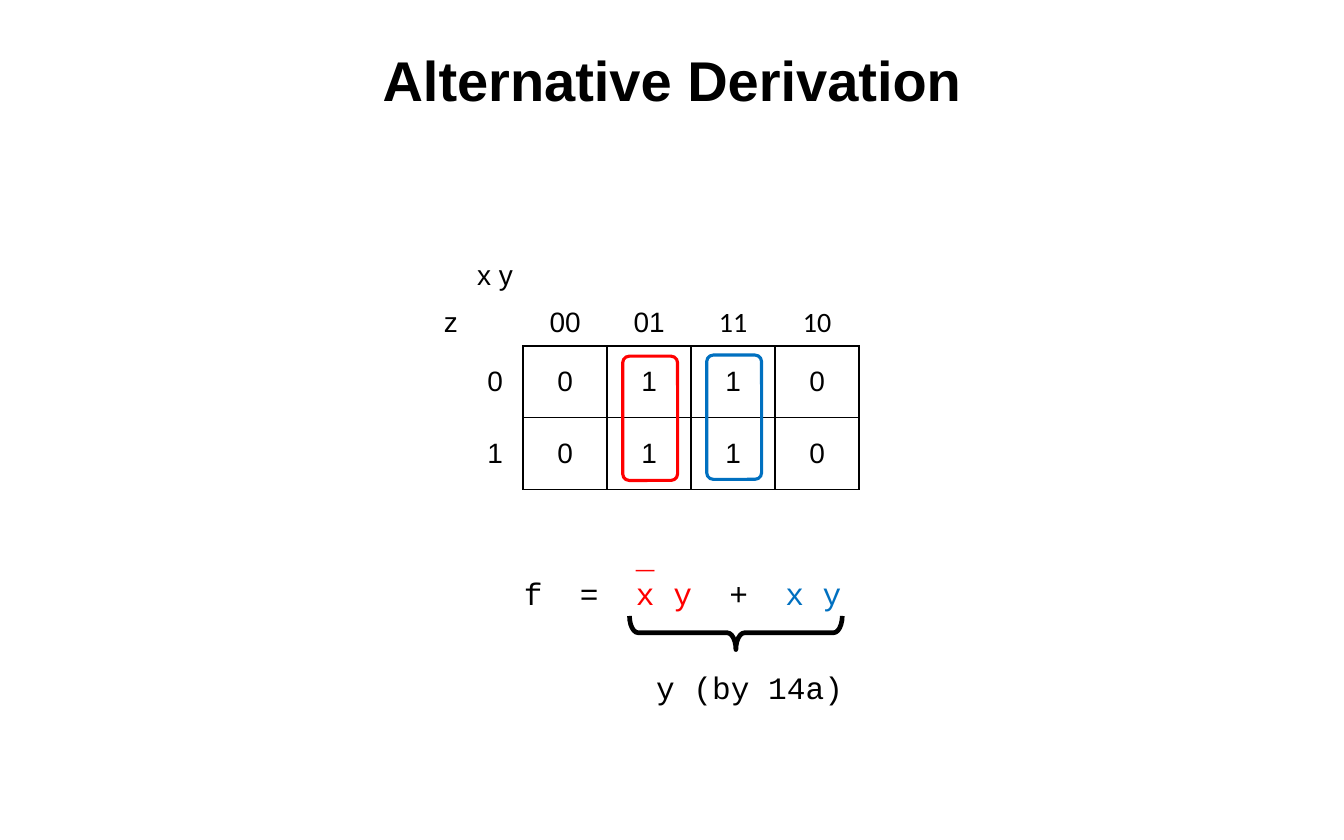
from dataclasses import dataclass

from lxml import etree
from pptx import Presentation
from pptx.dml.color import RGBColor
from pptx.enum import shapes, text
from pptx.oxml import ns
from pptx.util import Inches, Pt


@dataclass(frozen=True)
class Theme:
    black: str = "000000"
    white: str = "FFFFFF"
    red: str = "FF0000"
    blue: str = "0070C0"
    sans: str = "Arial"
    alternate: str = "Calibri"
    mono: str = "Courier New"
    title_size: int = 36
    map_size: int = 18
    formula_size: int = 20


@dataclass(frozen=True)
class Group:
    """A loop around adjacent ones in the Karnaugh map."""
    left: float
    top: float
    color: str


@dataclass(frozen=True)
class Term:
    """A piece of the formula, starting at a character column."""
    column: int
    label: str
    color: str


THEME = Theme()
CHARACTER = 1 / 6  # width in inches of a monospaced character at 20 pt
MAP_LABELS = [
    ["", "x y", "", "", "", ""],
    ["z", "", "00", "01", "11", "10"],
    ["", "0", "0", "1", "1", "0"],
    ["", "1", "0", "1", "1", "0"],
]
COLUMN_WIDTHS = [0.5] * 2 + [0.75] * 4
ROW_HEIGHTS = [0.42] * 2 + [0.64] * 2
ALTERNATE_FONT_LABELS = {(1, 4), (1, 5)}
NEIGHBOURS = {"L": (0, -1), "R": (0, 1), "T": (-1, 0), "B": (1, 0)}
GROUPS = [Group(5.56, 3.18, THEME.red), Group(6.31, 3.17, THEME.blue)]
TERMS = [
    Term(0, "f", THEME.black),
    Term(3, "=", THEME.black),
    Term(6, "x y", THEME.red),
    Term(11, "+", THEME.black),
    Term(14, "x y", THEME.blue),
]


def write_text(paragraph, label: str, *, size: int, font: str,
               color: str = THEME.black, bold: bool = False, align=None) -> None:
    run = paragraph.add_run()
    run.text = label
    run.font.size = Pt(size)
    run.font.name = font
    run.font.bold = bold
    run.font.color.rgb = RGBColor.from_string(color)
    if align is not None:
        paragraph.alignment = align


def add_title(slide, label: str) -> None:
    title = slide.shapes.title
    title.left, title.top = Inches(0), Inches(0.33)
    title.width, title.height = Inches(12), Inches(0.75)
    title.text_frame.vertical_anchor = text.MSO_ANCHOR.MIDDLE
    write_text(title.text_frame.paragraphs[0], label, size=THEME.title_size,
               font=THEME.sans, bold=True, align=text.PP_ALIGN.CENTER)


def in_grid(row: int, column: int) -> bool:
    return 2 <= row < len(ROW_HEIGHTS) and 2 <= column < len(COLUMN_WIDTHS)


def set_borders(cell, row: int, column: int) -> None:
    """Draw black edges around the map's values and white ones elsewhere."""
    properties = cell._tc.get_or_add_tcPr()
    for index, (side, (down, across)) in enumerate(NEIGHBOURS.items()):
        touches_grid = in_grid(row, column) or in_grid(row + down, column + across)
        line = etree.Element(ns.qn(f"a:ln{side}"), w=str(Pt(1)))
        fill = etree.SubElement(line, ns.qn("a:solidFill"))
        etree.SubElement(fill, ns.qn("a:srgbClr"),
                         val=THEME.black if touches_grid else THEME.white)
        properties.insert(index, line)


def add_karnaugh_map(slide) -> None:
    frame = slide.shapes.add_table(
        len(ROW_HEIGHTS), len(COLUMN_WIDTHS), Inches(3.67), Inches(2.25),
        Inches(sum(COLUMN_WIDTHS)), Inches(sum(ROW_HEIGHTS)))
    table = frame.table
    table.first_row = table.horz_banding = False
    for column, width in zip(table.columns, COLUMN_WIDTHS):
        column.width = Inches(width)
    for row, height in zip(table.rows, ROW_HEIGHTS):
        row.height = Inches(height)
    for r, labels in enumerate(MAP_LABELS):
        for c, label in enumerate(labels):
            cell = table.cell(r, c)
            cell.margin_left = Inches(0.21 if label == "z" else 0)
            cell.margin_right = cell.margin_top = cell.margin_bottom = 0
            cell.vertical_anchor = text.MSO_ANCHOR.MIDDLE
            cell.fill.solid()
            cell.fill.fore_color.rgb = RGBColor.from_string(THEME.white)
            set_borders(cell, r, c)
            if label:
                font = THEME.alternate if (r, c) in ALTERNATE_FONT_LABELS else THEME.sans
                write_text(cell.text_frame.paragraphs[0], label, size=THEME.map_size,
                           font=font, align=text.PP_ALIGN.CENTER)


def add_outline(slide, kind, left: float, top: float, width: float, height: float,
                color: str, weight: float):
    outline = slide.shapes.add_shape(
        kind, Inches(left), Inches(top), Inches(width), Inches(height))
    outline.shadow.inherit = False
    outline.fill.background()
    outline.line.color.rgb = RGBColor.from_string(color)
    outline.line.width = Pt(weight)
    return outline


def add_text_frame(slide, left: float, top: float, width: float, height: float):
    box = slide.shapes.add_textbox(Inches(left), Inches(top), Inches(width), Inches(height))
    box.text_frame.word_wrap = True
    return box.text_frame


def add_formula(slide) -> None:
    frame = add_text_frame(slide, 4.58, 4.75, 3.06, 0.77)
    overline = frame.paragraphs[0]
    overline._p.get_or_add_pPr().set("marL", str(Inches(6 * CHARACTER)))
    write_text(overline, "_", size=THEME.formula_size, font=THEME.mono, color=THEME.red)

    formula = frame.add_paragraph()
    tabs = etree.SubElement(formula._p.get_or_add_pPr(), ns.qn("a:tabLst"))
    for term in TERMS:
        if term.column:
            etree.SubElement(tabs, ns.qn("a:tab"),
                             pos=str(Inches(term.column * CHARACTER)), algn="l")
        write_text(formula, ("\t" if term.column else "") + term.label,
                   size=THEME.formula_size, font=THEME.mono, color=term.color)


def add_simplification(slide) -> None:
    brace = add_outline(slide, shapes.MSO_SHAPE.RIGHT_BRACE,
                        6.42, 4.7, 0.3, 1.9, THEME.black, 3)
    brace.rotation = 90
    brace.adjustments[0] = 0.26
    result = add_text_frame(slide, 5.76, 5.92, 1.89, 0.44)
    write_text(result.paragraphs[0], "y (by 14a)", size=THEME.formula_size, font=THEME.mono)


def main() -> None:
    presentation = Presentation()
    presentation.slide_width, presentation.slide_height = Inches(12), Inches(7.5)
    slide = presentation.slides.add_slide(presentation.slide_layouts[5])
    add_title(slide, "Alternative Derivation")
    add_karnaugh_map(slide)
    for group in GROUPS:
        loop = add_outline(slide, shapes.MSO_SHAPE.ROUNDED_RECTANGLE,
                           group.left, group.top, 0.49, 1.11, group.color, 2)
        loop.adjustments[0] = 0.12
    add_formula(slide)
    add_simplification(slide)
    presentation.save("out.pptx")


if __name__ == "__main__":
    main()
